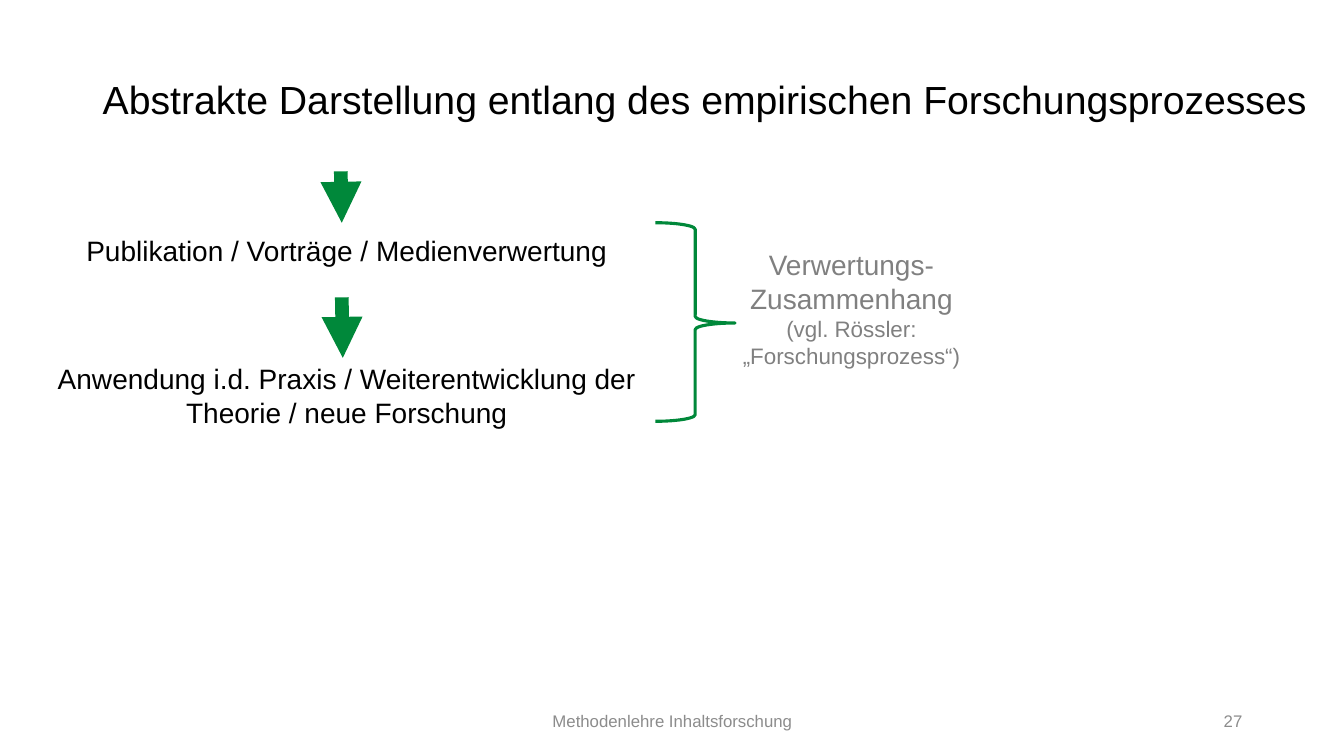
from dataclasses import dataclass

from lxml import etree
from pptx import Presentation
from pptx.dml.color import RGBColor
from pptx.enum.shapes import MSO_CONNECTOR, MSO_SHAPE
from pptx.enum.text import MSO_ANCHOR, PP_ALIGN
from pptx.oxml.ns import qn
from pptx.slide import Slide
from pptx.util import Inches, Pt

LEFT, CENTER, RIGHT = PP_ALIGN.LEFT, PP_ALIGN.CENTER, PP_ALIGN.RIGHT
TOP, MIDDLE, BOTTOM = MSO_ANCHOR.TOP, MSO_ANCHOR.MIDDLE, MSO_ANCHOR.BOTTOM
STRAIGHT, RIGHT_BRACE = MSO_CONNECTOR.STRAIGHT, MSO_SHAPE.RIGHT_BRACE

FONT = "Arial"
COLORS = {"text": "000000", "context": "808080", "footer": "8C8C8C", "accent": "00883A"}


@dataclass(frozen=True)
class TextBlock:
    box: tuple[float, float, float, float]
    lines: tuple[tuple[str, int], ...]  # wording and size in points
    color: str = "text"
    align: PP_ALIGN = CENTER
    anchor: MSO_ANCHOR = TOP
    inset: bool = True
    line_spacing: float = 1.0


@dataclass(frozen=True)
class Arrow:
    start: tuple[float, float]
    end: tuple[float, float]


TEXTS = (
    TextBlock((0.92, 0.4, 12.21, 0.87),
              (("Abstrakte Darstellung entlang des empirischen Forschungsprozesses", 28),),
              align=LEFT, anchor=BOTTOM, line_spacing=0.9),
    TextBlock((2.08, 6.95, 9.18, 0.4), (("Methodenlehre Inhaltsforschung", 12),),
              color="footer", anchor=MIDDLE),
    TextBlock((11.34, 6.95, 1.08, 0.4), (("27", 12),),
              color="footer", align=RIGHT, anchor=MIDDLE),
    TextBlock((0.41, 2.27, 6.06, 0.46), (("Publikation / Vorträge / Medienverwertung", 20),)),
    TextBlock((0.41, 3.59, 6.06, 0.34),
              (("Anwendung i.d. Praxis / Weiterentwicklung der Theorie / neue Forschung", 20),),
              inset=False),
    TextBlock((6.8, 2.46, 3.29, 0.79),
              (("Verwertungs-", 20), ("Zusammenhang", 20),
               ("(vgl. Rössler:", 16), ("„Forschungsprozess“)", 16)),
              color="context", inset=False),
)
ARROWS = (Arrow((3.38, 1.7), (3.39, 2.21)), Arrow((3.39, 2.95), (3.4, 3.55)))


def rgb(name: str) -> RGBColor:
    return RGBColor.from_string(COLORS[name])


def add_text(s: Slide, block: TextBlock) -> None:
    tf = s.shapes.add_textbox(*map(Inches, block.box)).text_frame
    tf.word_wrap = True
    tf.vertical_anchor = block.anchor
    if not block.inset:
        tf.margin_left = tf.margin_top = tf.margin_right = tf.margin_bottom = 0
    for i, (text, size) in enumerate(block.lines):
        p = tf.add_paragraph() if i else tf.paragraphs[0]
        p.alignment = block.align
        p.line_spacing = block.line_spacing
        r = p.add_run()
        r.text = text
        r.font.name = FONT
        r.font.size = Pt(size)
        r.font.color.rgb = rgb(block.color)


def add_arrow(s: Slide, arrow: Arrow) -> None:
    cxn = s.shapes.add_connector(STRAIGHT, *map(Inches, arrow.start + arrow.end))
    cxn.line.color.rgb = rgb("accent")
    cxn.line.width = Pt(9.75)
    etree.SubElement(cxn.line._get_or_add_ln(), qn("a:tailEnd"), type="triangle")
    etree.SubElement(cxn._element.spPr, qn("a:effectLst"))


def add_brace(s: Slide) -> None:
    sp = s.shapes.add_shape(RIGHT_BRACE, *map(Inches, (6.5, 2.21, 0.79, 1.97)))
    sp.adjustments[0] = 0.083
    sp.adjustments[1] = 0.505
    sp.shadow.inherit = False
    sp.fill.background()
    sp.line.color.rgb = rgb("accent")
    sp.line.width = Pt(2.25)


def main() -> None:
    prs = Presentation()
    prs.slide_width, prs.slide_height = Inches(13.33), Inches(7.5)
    s = prs.slides.add_slide(prs.slide_layouts[6])
    for block in TEXTS:
        add_text(s, block)
    add_brace(s)
    for arrow in ARROWS:
        add_arrow(s, arrow)
    prs.save("out.pptx")


if __name__ == "__main__":
    main()
